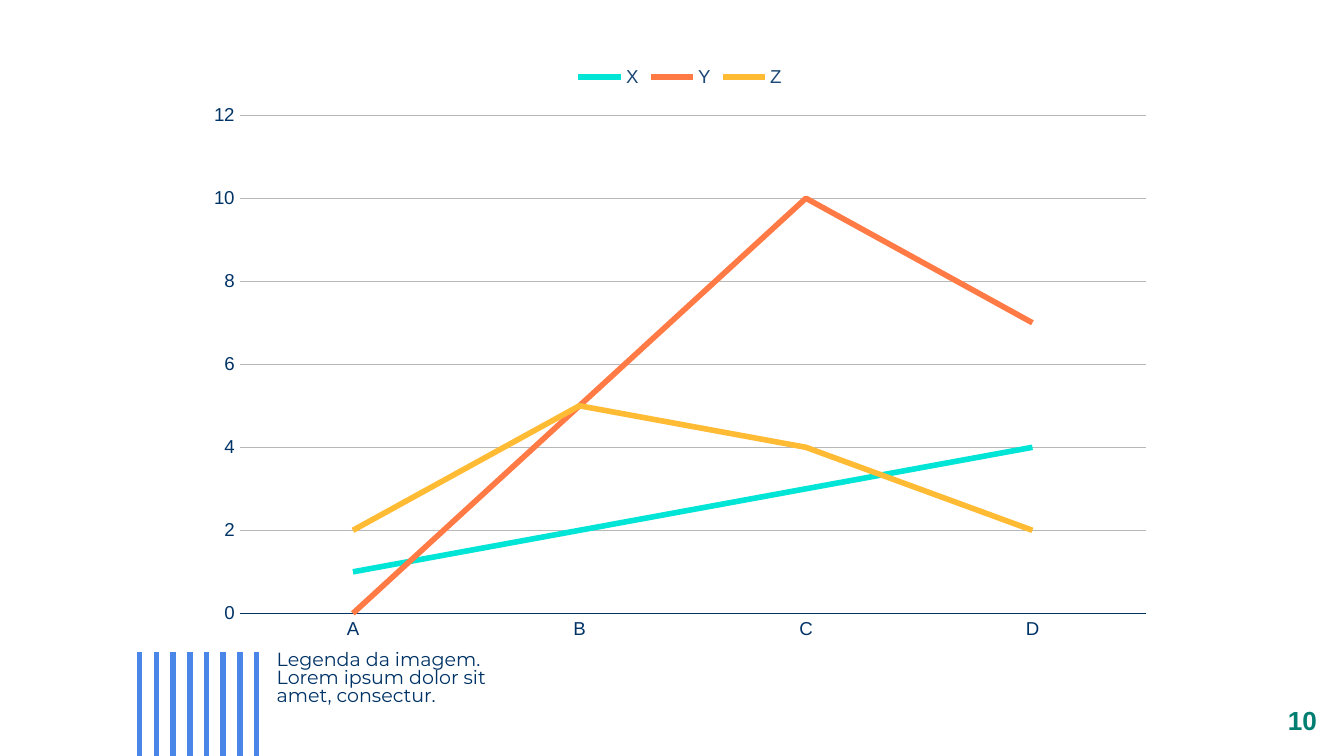
from pptx import Presentation
from pptx.chart.data import CategoryChartData
from pptx.dml.color import RGBColor
from pptx.enum.chart import XL_CHART_TYPE as ChartType, XL_LEGEND_POSITION as LegendPosition
from pptx.enum.chart import XL_MARKER_STYLE as Marker, XL_TICK_MARK as Tick
from pptx.enum.shapes import MSO_CONNECTOR as Connector, MSO_SHAPE as Shape
from pptx.enum.text import MSO_ANCHOR as Anchor, MSO_AUTO_SIZE as AutoSize, PP_ALIGN as Align
from pptx.oxml.ns import qn
from pptx.util import Cm, Pt
from lxml.etree import SubElement

COLORS = {
    "navy": "003366",
    "legend": "1A4775",
    "stripe": "4A86E8",
    "grid": "B7B7B7",
    "number": "007E71",
    "white": "FFFFFF",
    "turquoise": "00E5D6",
    "orange": "FF7A45",
    "yellow": "FFBB33",
}
CATEGORIES = ["A", "B", "C", "D"]
SERIES = [
    ("X", [1, 2, 3, 4], "turquoise"),
    ("Y", [0, 5, 10, 7], "orange"),
    ("Z", [2, 5, 4, 2], "yellow"),
]
SLIDE_WIDTH, SLIDE_HEIGHT = 25.4, 14.29
CAPTION_TOP = 12.32


class SlideBuilder:
    """Holds the style and the current slide, and adds each kind of element."""

    def __init__(self, slide):
        self.slide = slide
        self.shapes = slide.shapes

    def color(self, name):
        return RGBColor.from_string(COLORS[name])

    def style_font(self, font, size, color, name="Arial", bold=False):
        font.size, font.name, font.bold = Pt(size), name, bold
        font.color.rgb = self.color(color)

    def style_line(self, line, color, width):
        line.color.rgb = self.color(color)
        line.width = Pt(width)

    def add_stripes(self, left, right, count):
        step = (right - left) / (count - 1)
        for index in range(count):
            x = Cm(left + index * step)
            stripe = self.shapes.add_connector(
                Connector.STRAIGHT, x, Cm(CAPTION_TOP), x, Cm(SLIDE_HEIGHT))
            self.style_line(stripe.line, "stripe", 3)
            SubElement(stripe._element.spPr, qn("a:effectLst"))

    def add_page_number(self, text, width, height):
        box = self.shapes.add_shape(
            Shape.RECTANGLE, Cm(SLIDE_WIDTH - width), Cm(SLIDE_HEIGHT - height),
            Cm(width), Cm(height))
        box.shadow.inherit = False
        box.fill.solid()
        box.fill.fore_color.rgb = self.color("white")
        box.line.fill.background()
        frame = box.text_frame
        frame.text = text
        frame.vertical_anchor = Anchor.MIDDLE
        para = frame.paragraphs[0]
        para.alignment = Align.CENTER
        self.style_font(para.runs[0].font, 14, "number", bold=True)

    def add_caption(self, text, left, width, height):
        caption = self.slide.placeholders[1]
        caption.left, caption.top = Cm(left), Cm(CAPTION_TOP)
        caption.width, caption.height = Cm(width), Cm(height)
        frame = caption.text_frame
        frame.text = text
        frame.word_wrap = True
        frame.auto_size = AutoSize.NONE
        frame.vertical_anchor = Anchor.TOP
        frame.margin_left = frame.margin_top = frame.margin_right = 0
        frame.margin_bottom = Cm(0.25)
        para = frame.paragraphs[0]
        para.alignment = Align.LEFT
        para.line_spacing = 0.8
        para.space_before, para.space_after = Pt(0), Pt(10)
        self.style_font(para.runs[0].font, 10.2, "navy", "Montserrat")

    def add_line_chart(self, left, top, width, height):
        data = CategoryChartData(number_format="General")
        data.categories = CATEGORIES
        for name, values, _ in SERIES:
            data.add_series(name, values)
        chart = self.shapes.add_chart(
            ChartType.LINE, Cm(left), Cm(top), Cm(width), Cm(height), data).chart
        chart.has_title = False
        chart.has_legend = True
        chart.legend.position = LegendPosition.TOP
        chart.legend.include_in_layout = False
        self.style_font(chart.legend.font, 10, "legend")
        for series, (_, _, color) in zip(chart.plots[0].series, SERIES):
            series.smooth = False
            series.marker.style = Marker.NONE
            self.style_line(series.format.line, color, 3)
        for axis in (chart.category_axis, chart.value_axis):
            axis.has_title = False
            axis.major_tick_mark = axis.minor_tick_mark = Tick.NONE
            self.style_font(axis.tick_labels.font, 10, "navy",
                            bold=axis is chart.category_axis)
        self.style_line(chart.category_axis.format.line, "navy", 0.75)
        values = chart.value_axis
        values.minimum_scale, values.maximum_scale, values.major_unit = 0, 12, 2
        values.format.line.fill.background()
        values.has_major_gridlines = True
        self.style_line(values.major_gridlines.format.line, "grid", 0.75)


def main():
    deck = Presentation()
    deck.slide_width, deck.slide_height = Cm(SLIDE_WIDTH), Cm(SLIDE_HEIGHT)
    page = deck.slides.add_slide(deck.slide_layouts[0])
    title = page.shapes.title._element
    title.getparent().remove(title)

    builder = SlideBuilder(page)
    builder.add_stripes(2.64, 4.85, 8)
    builder.add_page_number("10", 1.57, 1.35)
    builder.add_caption("Legenda da imagem. Lorem ipsum dolor sit amet, consectur.",
                        5.23, 4.47, 1.68)
    builder.add_line_chart(3.68, 0.97, 18.34, 11.35)
    deck.save("out.pptx")


if __name__ == "__main__":
    main()
